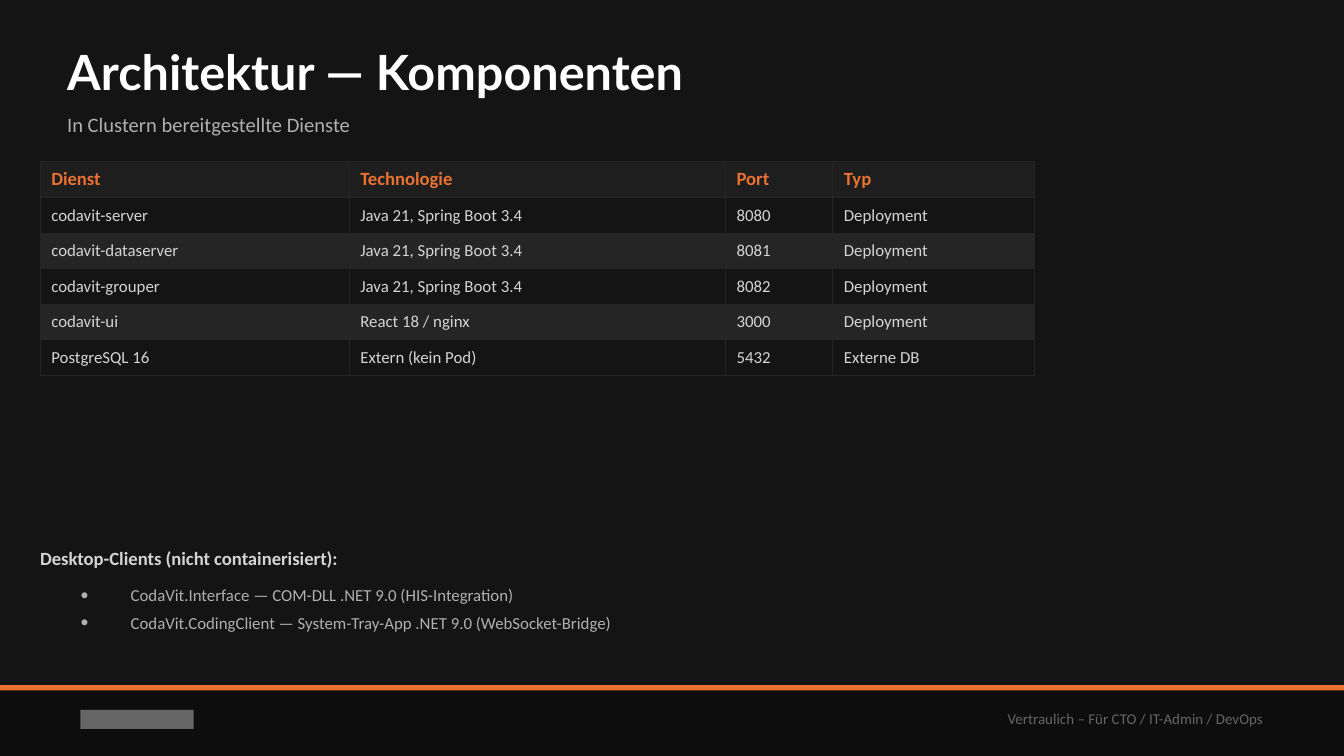
from pptx import Presentation
from pptx.dml.color import RGBColor
from pptx.enum.shapes import MSO_SHAPE
from pptx.enum.text import MSO_ANCHOR, MSO_AUTO_SIZE, PP_ALIGN
from pptx.oxml.ns import qn
from pptx.util import Cm, Pt
from lxml import etree

RECTANGLE = MSO_SHAPE.RECTANGLE
MIDDLE, TOP = MSO_ANCHOR.MIDDLE, MSO_ANCHOR.TOP
LEFT, RIGHT = PP_ALIGN.LEFT, PP_ALIGN.RIGHT
NO_AUTOFIT = MSO_AUTO_SIZE.NONE
TITLE_ONLY = 5

THEME = {
    "heading_font": "Lato", "body_font": "Calibri",
    "page": "141414", "footer": "0D0D0D", "header_row": "1E1E1E", "band": "252525",
    "accent": "E97132", "white": "FFFFFF", "light": "D4D4D4",
    "muted": "B0B0B0", "faint": "666666",
    "title": 26, "subtitle": 11, "label": 10, "body": 9, "note": 8,
}

TITLE = "Architektur — Komponenten"
SUBTITLE = "In Clustern bereitgestellte Dienste"
HEADER = ("Dienst", "Technologie", "Port", "Typ")
SERVICES = [
    ("codavit-server", "Java 21, Spring Boot 3.4", "8080", "Deployment"),
    ("codavit-dataserver", "Java 21, Spring Boot 3.4", "8081", "Deployment"),
    ("codavit-grouper", "Java 21, Spring Boot 3.4", "8082", "Deployment"),
    ("codavit-ui", "React 18 / nginx", "3000", "Deployment"),
    ("PostgreSQL 16", "Extern (kein Pod)", "5432", "Externe DB"),
]
COLUMN_WIDTHS = (5.84, 7.11, 2.03, 3.81)
HEADER_HEIGHT, ROW_HEIGHT = 0.69, 0.67
CLIENTS_LABEL = "Desktop-Clients (nicht containerisiert):"
CLIENTS = [
    "CodaVit.Interface — COM-DLL .NET 9.0 (HIS-Integration)",
    "CodaVit.CodingClient — System-Tray-App .NET 9.0 (WebSocket-Bridge)",
]
CONFIDENTIAL = "Vertraulich – Für CTO / IT-Admin / DevOps"


def color(name):
    return RGBColor.from_string(THEME[name])


def write(para, text, size="body", tint="muted", font="body_font", bold=False):
    span = para.add_run()
    span.text = text
    span.font.name = THEME[font]
    span.font.size = Pt(THEME[size])
    span.font.bold = bold
    span.font.color.rgb = color(tint)


def prepare(frame, margins=(0, 0), anchor=MIDDLE):
    frame.word_wrap = True
    frame.auto_size = NO_AUTOFIT
    frame.vertical_anchor = anchor
    frame.margin_left = frame.margin_right = Cm(margins[0])
    frame.margin_top = frame.margin_bottom = Cm(margins[1])
    return frame


def text_box(page, place, **layout):
    box = page.shapes.add_textbox(*map(Cm, place))
    return prepare(box.text_frame, **layout)


def bar(page, place, fill):
    shape = page.shapes.add_shape(RECTANGLE, *map(Cm, place))
    shape.shadow.inherit = False
    shape.fill.solid()
    shape.fill.fore_color.rgb = color(fill)
    shape.line.fill.background()


def bullet(para, indent):
    properties = para._p.get_or_add_pPr()
    properties.set("marL", str(Cm(indent)))
    properties.set("indent", str(-Cm(indent)))
    etree.SubElement(properties, qn("a:buFont"), typeface=THEME["body_font"])
    etree.SubElement(properties, qn("a:buChar"), char="•")
    para.space_after = Pt(4)
    para.font.size = Pt(THEME["body"])


def border(cell, tint):
    properties = cell._tc.get_or_add_tcPr()
    for index, side in enumerate(("a:lnL", "a:lnR", "a:lnT", "a:lnB")):
        line = etree.Element(qn(side), w=str(Pt(0.5)))
        fill = etree.SubElement(line, qn("a:solidFill"))
        etree.SubElement(fill, qn("a:srgbClr"), val=THEME[tint])
        properties.insert(index, line)


def service_table(page, left, top):
    heights = [HEADER_HEIGHT] + [ROW_HEIGHT] * len(SERVICES)
    table = page.shapes.add_table(
        len(heights), len(HEADER), Cm(left), Cm(top),
        Cm(sum(COLUMN_WIDTHS)), Cm(sum(heights))).table
    for column, width in zip(table.columns, COLUMN_WIDTHS):
        column.width = Cm(width)
    for index, values in enumerate([HEADER, *SERVICES]):
        table.rows[index].height = Cm(heights[index])
        if index == 0:
            fill, style = "header_row", dict(size="label", tint="accent", bold=True)
        else:
            fill, style = "page" if index % 2 else "band", dict(tint="light")
        for cell, value in zip(table.rows[index].cells, values):
            cell.vertical_anchor = MIDDLE
            cell.margin_left = cell.margin_right = Cm(0.21)
            cell.margin_top = cell.margin_bottom = Cm(0.12)
            cell.fill.solid()
            cell.fill.fore_color.rgb = color(fill)
            border(cell, "band")
            write(cell.text_frame.paragraphs[0], value, **style)


def main():
    deck = Presentation()
    deck.slide_width, deck.slide_height = Cm(25.4), Cm(14.29)
    page = deck.slides.add_slide(deck.slide_layouts[TITLE_ONLY])
    page.background.fill.solid()
    page.background.fill.fore_color.rgb = color("page")

    bar(page, (0, 12.95, 25.4, 1.34), "footer")
    bar(page, (0, 12.95, 25.4, 0.1), "accent")
    bar(page, (1.52, 13.42, 2.14, 0.36), "faint")
    para = text_box(page, (13.97, 13.08, 10.16, 1.02), margins=(0.25, 0.13)).paragraphs[0]
    para.alignment = RIGHT
    write(para, CONFIDENTIAL, "note", "faint")

    title = page.shapes.title
    title.left, title.top, title.width, title.height = map(Cm, (1.27, 0.64, 22.86, 1.4))
    para = prepare(title.text_frame).paragraphs[0]
    para.alignment = LEFT
    write(para, TITLE, "title", "white", "heading_font", bold=True)
    para = text_box(page, (1.27, 1.91, 22.86, 0.89)).paragraphs[0]
    write(para, SUBTITLE, "subtitle")

    service_table(page, 0.76, 3.05)

    para = text_box(page, (0.76, 10.16, 23.88, 0.76)).paragraphs[0]
    write(para, CLIENTS_LABEL, "label", "light", bold=True)
    frame = text_box(page, (1.27, 10.92, 22.86, 1.78), margins=(0.25, 0.13), anchor=TOP)
    for index, client in enumerate(CLIENTS):
        para = frame.add_paragraph() if index else frame.paragraphs[0]
        bullet(para, 0.95)
        write(para, client)

    deck.save("out.pptx")


if __name__ == "__main__":
    main()
